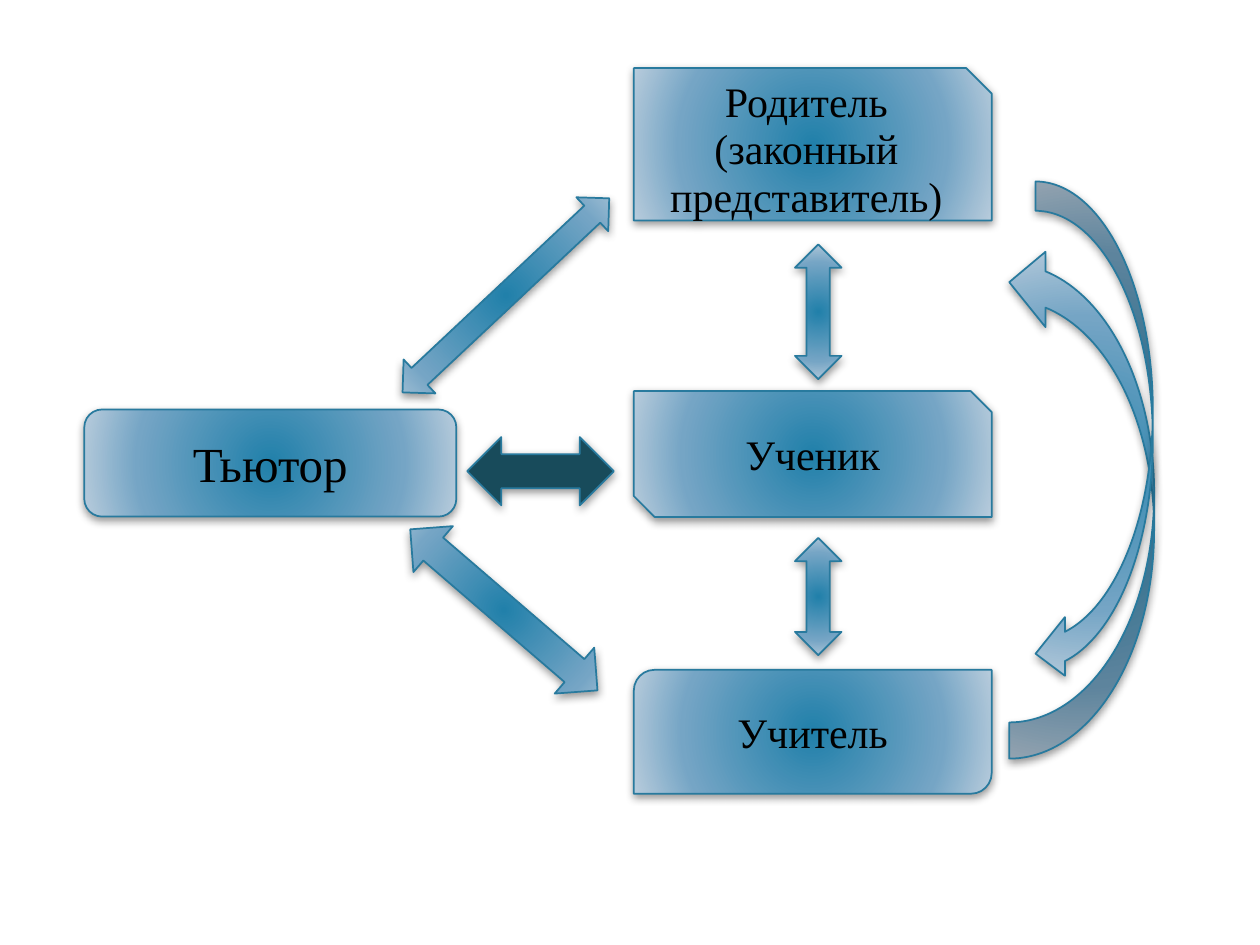
from dataclasses import dataclass

from lxml import etree
from pptx import Presentation
from pptx import util as u
from pptx.dml import color
from pptx.enum import shapes as sh, text as tx
from pptx.oxml import ns

COLORS = {
    "core": "2180AA",
    "middle": "75A5C5",
    "edge": "B8CCDC",
    "outline": "287A9E",
    "dark_arrow": "184B5B",
    "black": "000000",
}
GRADIENT = ((0, "core"), (69, "middle"), (100, "edge"))
FONT = "Times New Roman"
KIND = sh.MSO_SHAPE


@dataclass(frozen=True)
class Role:
    kind: KIND
    left: float
    top: float
    width: float
    height: float
    label: str
    size: float = 24
    line_spacing: float = 1.0


@dataclass(frozen=True)
class Arrow:
    kind: KIND
    left: float
    top: float
    width: float
    height: float
    rotation: float = 0
    solid: str = ""
    adjustments: tuple[float, ...] = ()


# Roles on the right share one column; lengths are points
COLUMN_LEFT, COLUMN_WIDTH = 362.2, 204.5
ROLES = (
    Role(KIND.ROUNDED_RECTANGLE, 48.2, 234, 212.6, 61.2, "Тьютор", 28),
    # Three lines need tighter spacing to stay inside the box
    Role(KIND.SNIP_1_RECTANGLE, COLUMN_LEFT, 38.9, COLUMN_WIDTH, 87.1,
         "Родитель (законный представитель)", line_spacing=0.95),
    Role(KIND.SNIP_2_DIAG_RECTANGLE, COLUMN_LEFT, 223.5, COLUMN_WIDTH, 72, "Ученик"),
    Role(KIND.ROUND_2_DIAG_RECTANGLE, COLUMN_LEFT, 382.8, COLUMN_WIDTH, 70.8, "Учитель"),
)
ARROWS = (
    # Tutor to pupil, parent and teacher
    Arrow(KIND.LEFT_RIGHT_ARROW, 267, 249.8, 83.8, 39, solid="dark_arrow"),
    Arrow(KIND.LEFT_RIGHT_ARROW, 208.1, 155.5, 162, 26.6, 316.8),
    Arrow(KIND.LEFT_RIGHT_ARROW, 217.4, 331.2, 141.1, 34.6, 40.7),
    # Between parent and teacher
    Arrow(KIND.CURVED_RIGHT_ARROW, 576.7, 139.7, 82.8, 293.8, 180,
          adjustments=(0.25, 0.52, 0.25)),
    Arrow(KIND.CURVED_LEFT_ARROW, 591.8, 103.7, 67, 286.6),
    # Pupil to teacher and to parent
    Arrow(KIND.UP_DOWN_ARROW, 454.3, 307.4, 26.6, 67),
    Arrow(KIND.UP_DOWN_ARROW, 454.3, 139.7, 26.6, 77),
)


def rgb(name: str) -> color.RGBColor:
    return color.RGBColor.from_string(COLORS[name])


def add_node(parent, tag: str, **attributes):
    values = {key: str(value) for key, value in attributes.items()}
    return etree.SubElement(parent, ns.qn(tag), values)


def fill_radial(shape) -> None:
    shape.fill.gradient()
    gradient = shape.element.spPr.find(ns.qn("a:gradFill"))
    for child in list(gradient):
        gradient.remove(child)
    stops = add_node(gradient, "a:gsLst")
    for position, name in GRADIENT:
        stop = add_node(stops, "a:gs", pos=position * 1000)
        add_node(stop, "a:srgbClr", val=COLORS[name])
    circle = add_node(gradient, "a:path", path="circle")
    add_node(circle, "a:fillToRect", l=100000, t=100000, r=100000, b=100000)


def add_shadow(shape) -> None:
    shape.shadow.inherit = False
    effects = shape.element.spPr.find(ns.qn("a:effectLst"))
    shadow = add_node(effects, "a:outerShdw", blurRad=u.Pt(5), dist=u.Pt(2),
                      dir=90 * 60000, rotWithShape=0)
    tint = add_node(shadow, "a:srgbClr", val=COLORS["black"])
    add_node(tint, "a:alpha", val=40000)


def draw_body(slide, part: Role | Arrow, solid: str = ""):
    shape = slide.shapes.add_shape(part.kind, u.Pt(part.left), u.Pt(part.top),
                                   u.Pt(part.width), u.Pt(part.height))
    if solid:
        shape.fill.solid()
        shape.fill.fore_color.rgb = rgb(solid)
    else:
        fill_radial(shape)
    shape.line.color.rgb = rgb("outline")
    shape.line.width = u.Pt(1)
    add_shadow(shape)
    return shape


def draw_role(slide, role: Role) -> None:
    frame = draw_body(slide, role).text_frame
    frame.text = role.label
    frame.word_wrap = True
    frame.vertical_anchor = tx.MSO_ANCHOR.MIDDLE
    frame.margin_top = frame.margin_bottom = u.Pt(0)
    paragraph = frame.paragraphs[0]
    paragraph.alignment = tx.PP_ALIGN.CENTER
    paragraph.line_spacing = role.line_spacing
    font = paragraph.runs[0].font
    font.name = FONT
    font.size = u.Pt(role.size)
    font.color.rgb = rgb("black")


def draw_arrow(slide, arrow: Arrow) -> None:
    shape = draw_body(slide, arrow, arrow.solid)
    shape.rotation = arrow.rotation
    for index, value in enumerate(arrow.adjustments):
        shape.adjustments[index] = value


def main() -> None:
    deck = Presentation()
    deck.slide_width, deck.slide_height = u.Pt(720), u.Pt(540)
    slide = deck.slides.add_slide(deck.slide_layouts[6])
    for role in ROLES:
        draw_role(slide, role)
    for arrow in ARROWS:
        draw_arrow(slide, arrow)
    deck.save("out.pptx")


if __name__ == "__main__":
    main()
